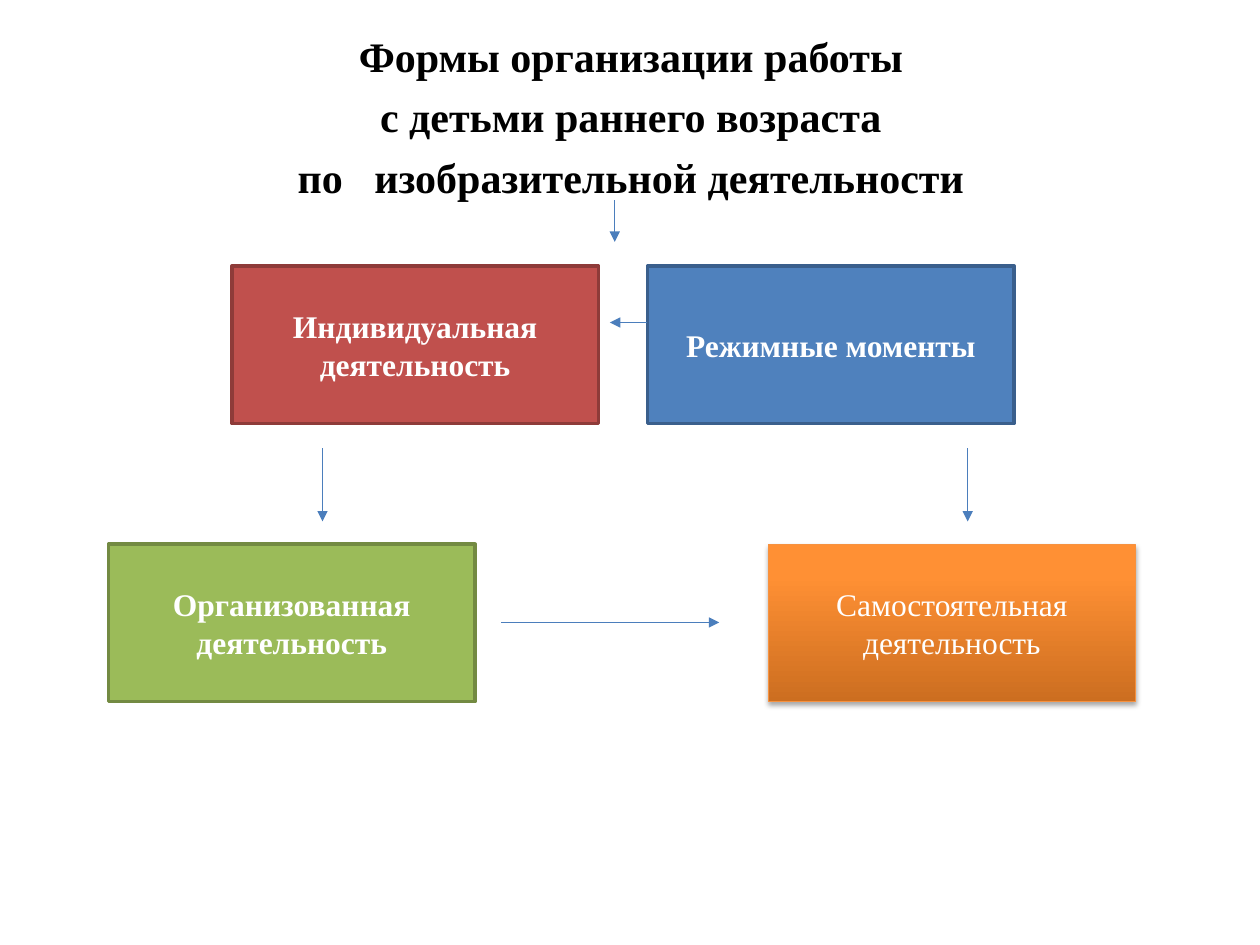
import copy

import pptx
import pptx.dml.color
import pptx.enum.shapes
import pptx.enum.text
import pptx.oxml
import pptx.oxml.ns
import pptx.util
from pptx.dml.color import RGBColor
from pptx.util import Pt

BLACK = RGBColor(0x00, 0x00, 0x00)
WHITE = RGBColor(0xFF, 0xFF, 0xFF)
RED = RGBColor(0xC0, 0x50, 0x4D)
RED_EDGE = RGBColor(0x8E, 0x3B, 0x39)
BLUE = RGBColor(0x4F, 0x81, 0xBD)
BLUE_EDGE = RGBColor(0x3A, 0x5F, 0x8C)
GREEN = RGBColor(0x9B, 0xBB, 0x59)
GREEN_EDGE = RGBColor(0x73, 0x8A, 0x42)
ORANGE_EDGE = RGBColor(0xF6, 0x92, 0x40)
ORANGE_STOPS = [
    (0, RGBColor(0xCC, 0x6E, 0x20)),
    (80, RGBColor(0xFF, 0x90, 0x34)),
    (100, RGBColor(0xFF, 0x91, 0x36)),
]
ARROW = RGBColor(0x4B, 0x7E, 0xBC)

BOX_WIDTH, BOX_HEIGHT = 209.5, 90
UPPER_ROW, LOWER_ROW = 152, 311


class SlideBuilder:
    font_name = "Times New Roman"
    title_size = 24
    box_size = 18

    def __init__(self, slide):
        self.slide = slide

    def style(self, paragraph, size, color, bold):
        paragraph.alignment = pptx.enum.text.PP_ALIGN.CENTER
        paragraph.font.name = self.font_name
        paragraph.font.size = Pt(size)
        paragraph.font.bold = bold
        paragraph.font.color.rgb = color

    def title(self, lines, left, top, width, height):
        shape = self.slide.shapes.add_textbox(Pt(left), Pt(top), Pt(width), Pt(height))
        frame = shape.text_frame
        frame.word_wrap = True
        frame.text = "\n".join(lines)
        for paragraph in frame.paragraphs:
            paragraph.line_spacing = 1.2
            self.style(paragraph, self.title_size, BLACK, True)

    def box(self, text, left, top, edge, fill=None, line_width=2, bold=True):
        shape = self.slide.shapes.add_shape(
            pptx.enum.shapes.MSO_SHAPE.RECTANGLE,
            Pt(left), Pt(top), Pt(BOX_WIDTH), Pt(BOX_HEIGHT))
        shape.shadow.inherit = False
        if fill is not None:
            shape.fill.solid()
            shape.fill.fore_color.rgb = fill
        shape.line.color.rgb = edge
        shape.line.width = Pt(line_width)
        frame = shape.text_frame
        frame.word_wrap = True
        frame.vertical_anchor = pptx.enum.text.MSO_ANCHOR.MIDDLE
        frame.text = text
        self.style(frame.paragraphs[0], self.box_size, WHITE, bold)
        return shape

    def gradient(self, shape, stops, angle):
        shape.fill.gradient()
        shape.fill.gradient_angle = angle
        stop_list = shape._element.spPr.find(".//" + pptx.oxml.ns.qn("a:gsLst"))
        while len(stop_list) < len(stops):
            stop_list.append(copy.deepcopy(stop_list[-1]))
        for stop, (position, color) in zip(shape.fill.gradient_stops, stops):
            stop.position = position / 100
            stop.color.rgb = color

    def drop_shadow(self, shape, blur, distance, opacity):
        effects = shape._element.spPr.find(pptx.oxml.ns.qn("a:effectLst"))
        effects.append(pptx.oxml.parse_xml(
            f'<a:outerShdw {pptx.oxml.ns.nsdecls("a")} blurRad="{Pt(blur)}" '
            f'dist="{Pt(distance)}" dir="5400000" rotWithShape="0">'
            f'<a:srgbClr val="{BLACK}"><a:alpha val="{opacity * 1000}"/></a:srgbClr>'
            '</a:outerShdw>'))

    def arrow(self, start_x, start_y, end_x, end_y):
        connector = self.slide.shapes.add_connector(
            pptx.enum.shapes.MSO_CONNECTOR.STRAIGHT,
            Pt(start_x), Pt(start_y), Pt(end_x), Pt(end_y))
        connector.line.color.rgb = ARROW
        connector.line.width = Pt(0.75)
        namespace = pptx.oxml.ns.nsdecls("a")
        connector.line._get_or_add_ln().append(
            pptx.oxml.parse_xml(f'<a:tailEnd {namespace} type="triangle"/>'))
        connector._element.spPr.append(
            pptx.oxml.parse_xml(f"<a:effectLst {namespace}/>"))


def main():
    presentation = pptx.Presentation()
    presentation.slide_width, presentation.slide_height = Pt(720), Pt(540)
    slide = presentation.slides.add_slide(presentation.slide_layouts[6])
    builder = SlideBuilder(slide)

    # Title
    builder.title(
        ["Формы организации работы",
         "с детьми раннего возраста",
         "по   изобразительной деятельности"],
        60, 8, 601, 109.5)

    # Forms of work
    builder.box("Индивидуальная деятельность", 132.5, UPPER_ROW, RED_EDGE, RED)
    builder.box("Режимные моменты", 370, UPPER_ROW, BLUE_EDGE, BLUE)
    independent = builder.box("Самостоятельная деятельность", 439.2, LOWER_ROW,
                              ORANGE_EDGE, line_width=0.75, bold=False)
    builder.gradient(independent, ORANGE_STOPS, 90)
    builder.drop_shadow(independent, 3.1, 1.8, 35)
    builder.box("Организованная деятельность", 62, LOWER_ROW, GREEN_EDGE, GREEN)

    # Arrows between the forms
    for x in (184.3, 553):
        builder.arrow(x, 256.3, x, 298)
    builder.arrow(286.5, 355.7, 411, 355.7)
    builder.arrow(351.3, 114.5, 351.3, 138.2)
    builder.arrow(370, 184.3, 348.5, 184.3)

    presentation.save("out.pptx")


if __name__ == "__main__":
    main()
